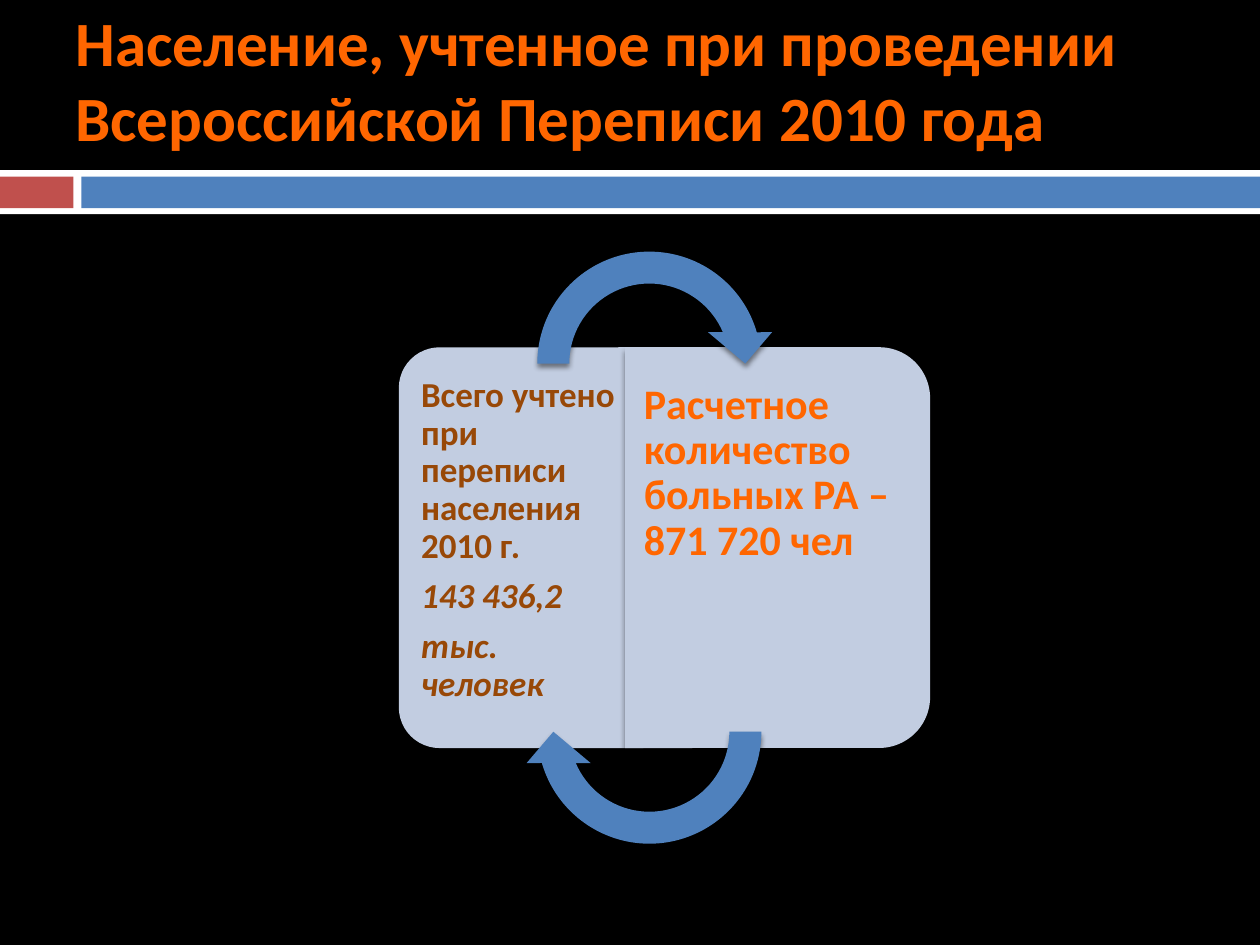
"""Build the census slide: a title band and two panels linked by circular arrows."""
from lxml import etree
from pptx import Presentation
from pptx.dml.color import RGBColor
from pptx.enum.shapes import MSO_SHAPE
from pptx.enum.text import MSO_ANCHOR
from pptx.oxml.ns import qn
from pptx.util import Cm, Pt

RECTANGLE = MSO_SHAPE.RECTANGLE
PANEL = MSO_SHAPE.ROUND_2_SAME_RECTANGLE
ARROW = MSO_SHAPE.CIRCULAR_ARROW
TOP, MIDDLE = MSO_ANCHOR.TOP, MSO_ANCHOR.MIDDLE

THEME = {
    "font": "Calibri",
    "background": "000000",
    "band": "FFFFFF",
    "accent": "C0504D",
    "blue": "4F81BD",
    "panel": "C2CDE1",
    "orange": "FF6600",
    "brown": "984807",
    "title_size": 36,
    "census_size": 20,
    "patients_size": 24,
}

TITLE = [("Население, учтенное при проведении Всероссийской Переписи 2010 года", False)]
BANDS = [
    ("band", (0, 3.43, 25.4, 0.89)),
    ("accent", (0, 3.56, 1.48, 0.64)),
    ("blue", (1.64, 3.56, 23.76, 0.64)),
]
PANELS = [
    {
        "left": 8.04, "width": 4.93, "rotation": 270,
        "lines": [
            ("Всего учтено при переписи населения 2010 г.", False),
            ("143 436,2", True),
            ("тыс. человек", True),
        ],
        "text_box": (8.29, 7.24, 4.7, 7.59),
        "format": {"size": THEME["census_size"], "color": THEME["brown"],
                   "insets": (0.2, 0.36, 0.45, 0.36)},
    },
    {
        "left": 12.6, "width": 6.15, "rotation": 90,
        "lines": [("Расчетное количество больных РА – 871 720 чел", False)],
        "text_box": (12.6, 7.29, 5.84, 7.49),
        "format": {"size": THEME["patients_size"], "color": THEME["orange"],
                   "insets": (0.38, 0.43, 0.25, 0.43)},
    },
]
PANEL_HEIGHT = 8.08
CENTER_X, CENTER_Y = 13.09, 11.04
ARROW_SIZE, ARROW_OFFSET = 5.16, 3.71
ARROW_ROTATIONS = [(-1, 0), (1, 180)]
PANEL_ADJUSTMENTS = (0.167, 0)
ARROW_ADJUSTMENTS = (0.125, 11.423, 204.577, 108, 0.125)


def add_shadow(shape):
    effects = shape._element.spPr.find(qn("a:effectLst"))
    shadow = etree.SubElement(effects, qn("a:outerShdw"), blurRad=str(Pt(3)),
                              dist=str(Pt(2.4)), dir="5400000", rotWithShape="0")
    black = etree.SubElement(shadow, qn("a:srgbClr"), val="000000")
    etree.SubElement(black, qn("a:alpha"), val="45000")


def add_block(slide, kind, box, color, rotation=0, adjustments=(), shadow=False):
    block = slide.shapes.add_shape(kind, *map(Cm, box))
    block.shadow.inherit = False
    block.fill.solid()
    block.fill.fore_color.rgb = RGBColor.from_string(THEME[color])
    block.line.fill.background()
    block.rotation = rotation
    for index, value in enumerate(adjustments):
        block.adjustments[index] = value
    if shadow:
        add_shadow(block)


def add_text(slide, box, lines, *, size, color, insets, anchor=TOP,
             line_spacing=0.9, space_ratio=0.35):
    frame = slide.shapes.add_textbox(*map(Cm, box)).text_frame
    frame.word_wrap = True
    frame.vertical_anchor = anchor
    (frame.margin_left, frame.margin_top,
     frame.margin_right, frame.margin_bottom) = map(Cm, insets)
    for index, (line, italic) in enumerate(lines):
        paragraph = frame.add_paragraph() if index else frame.paragraphs[0]
        paragraph.line_spacing = line_spacing
        paragraph.space_after = Pt(size * space_ratio)
        run = paragraph.add_run()
        run.text = line
        run.font.name = THEME["font"]
        run.font.size = Pt(size)
        run.font.bold = True
        run.font.italic = italic
        run.font.color.rgb = RGBColor.from_string(color)


def main():
    deck = Presentation()
    deck.slide_width, deck.slide_height = Cm(25.4), Cm(19.05)
    slide = deck.slides.add_slide(deck.slide_layouts[6])
    slide.background.fill.solid()
    slide.background.fill.fore_color.rgb = RGBColor.from_string(THEME["background"])

    for color, box in BANDS:
        add_block(slide, RECTANGLE, box, color)
    add_text(slide, (1.27, 0.76, 22.86, 3.18), TITLE, size=THEME["title_size"],
             color=THEME["orange"], insets=(0.25, 0.13, 0.25, 1.65), anchor=MIDDLE,
             line_spacing=1.0, space_ratio=0)

    for panel in PANELS:
        middle = panel["left"] + panel["width"] / 2
        box = (middle - PANEL_HEIGHT / 2, CENTER_Y - panel["width"] / 2,
               PANEL_HEIGHT, panel["width"])
        add_block(slide, PANEL, box, "panel", panel["rotation"],
                  PANEL_ADJUSTMENTS, shadow=True)
        add_text(slide, panel["text_box"], panel["lines"], **panel["format"])

    for side, rotation in ARROW_ROTATIONS:
        box = (CENTER_X - ARROW_SIZE / 2,
               CENTER_Y + side * ARROW_OFFSET - ARROW_SIZE / 2,
               ARROW_SIZE, ARROW_SIZE)
        add_block(slide, ARROW, box, "blue", rotation, ARROW_ADJUSTMENTS, shadow=True)

    deck.save("out.pptx")


if __name__ == "__main__":
    main()
